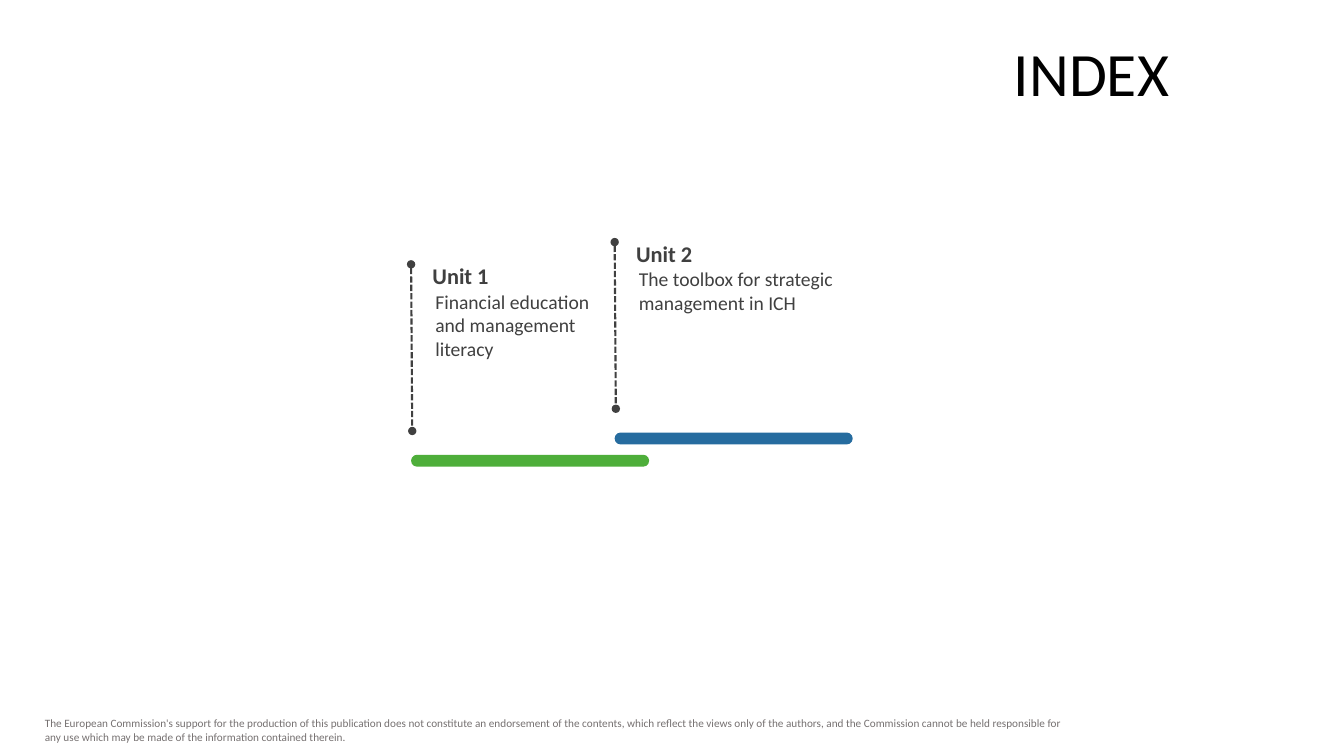
import pptx
import pptx.util
import pptx.dml.color
import pptx.enum.dml
import pptx.enum.shapes
import pptx.enum.text
from lxml import etree
from dataclasses import dataclass
from pptx.util import Cm


@dataclass(frozen=True)
class Theme:
    font: str = "Calibri"
    black: str = "000000"
    dark: str = "404040"
    grey: str = "767171"
    green: str = "4EAE3A"
    blue: str = "266C9F"
    title: int = 44
    heading: int = 16
    body: int = 14
    small: int = 8


theme = Theme()


def style(paragraph, size, color, bold=False):
    paragraph.font.name = theme.font
    paragraph.font.size = pptx.util.Pt(size)
    paragraph.font.bold = bold
    paragraph.font.color.rgb = pptx.dml.color.RGBColor.from_string(color)


def add_text(text, left, top, width, height, size, color, bold=False, side_inset=0.25):
    box = slide.shapes.add_textbox(Cm(left), Cm(top), Cm(width), Cm(height))
    frame = box.text_frame
    frame.word_wrap = True
    frame.margin_left = frame.margin_right = Cm(side_inset)
    frame.text = text
    style(frame.paragraphs[0], size, color, bold)


presentation = pptx.Presentation()
presentation.slide_width = Cm(33.87)
presentation.slide_height = Cm(19.05)
slide = presentation.slides.add_slide(presentation.slide_layouts[5])

# Title
title = slide.shapes.title
title.left, title.top, title.width, title.height = Cm(7.85), Cm(0.94), Cm(21.87), Cm(2)
title.text_frame.text = "INDEX"
title.text_frame.vertical_anchor = pptx.enum.text.MSO_ANCHOR.MIDDLE
heading = title.text_frame.paragraphs[0]
heading.alignment = pptx.enum.text.PP_ALIGN.RIGHT
heading.line_spacing = 0.9
style(heading, theme.title, theme.black)

# Units: name, description, bar colour, bar left, bar top, text width
units = [
    ("Unit 1", "Financial education and management literacy", theme.green, 10.36, 11.46, 4.8),
    ("Unit 2", "The toolbox for strategic management in ICH", theme.blue, 15.49, 10.9, 5.65),
]
for name, description, color, left, top, text_width in units:
    # Coloured bar
    bar = slide.shapes.add_shape(
        pptx.enum.shapes.MSO_SHAPE.ROUNDED_RECTANGLE, Cm(left), Cm(top), Cm(6), Cm(0.3))
    bar.adjustments[0] = 0.5
    bar.shadow.inherit = False
    bar.fill.solid()
    bar.fill.fore_color.rgb = pptx.dml.color.RGBColor.from_string(color)
    bar.line.fill.background()

    # Description and heading
    add_text(description, left + 0.36, top - 4.29, text_width, 2.64, theme.body, theme.dark)
    add_text(name, left + 0.24, top - 4.98, text_width, 0.94, theme.heading, theme.dark,
             bold=True, side_inset=0.3)

    # Dashed marker with a dot at each end
    marker = slide.shapes.add_connector(
        pptx.enum.shapes.MSO_CONNECTOR.STRAIGHT,
        Cm(left), Cm(top - 4.8), Cm(left + 0.03), Cm(top - 0.6))
    marker.line.width = pptx.util.Pt(1.5)
    marker.line.color.rgb = pptx.dml.color.RGBColor.from_string(theme.dark)
    marker.line.dash_style = pptx.enum.dml.MSO_LINE.SQUARE_DOT
    for end in ("a:headEnd", "a:tailEnd"):
        etree.SubElement(marker.line._get_or_add_ln(), pptx.oxml.ns.qn(end), type="oval")
    etree.SubElement(marker._element.spPr, pptx.oxml.ns.qn("a:effectLst"))

# Disclaimer
add_text(
    "The European Commission's support for the production of this publication does not "
    "constitute an endorsement of the contents, which reflect the views only of the authors, "
    "and the Commission cannot be held responsible for any use which may be made of the "
    "information contained therein.",
    0.88, 17.93, 26.57, 0.94, theme.small, theme.grey)

presentation.save("out.pptx")
